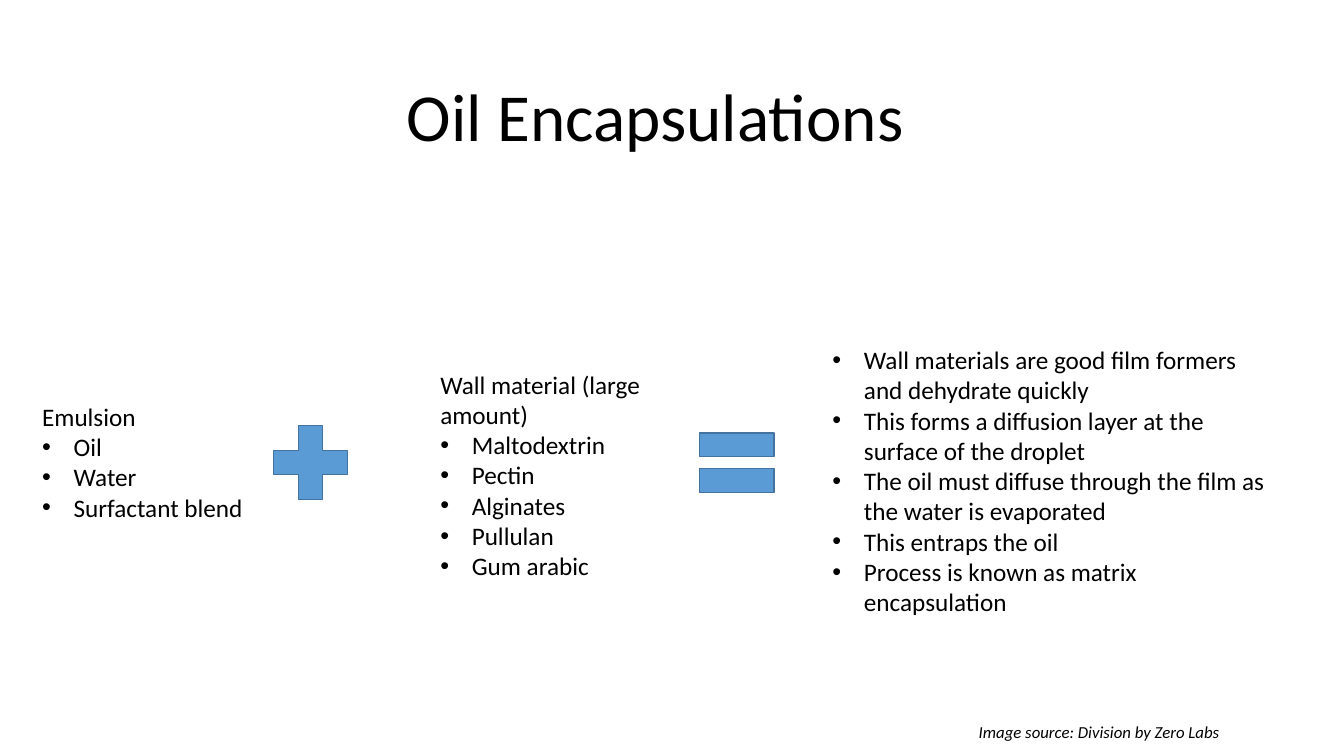
import pptx
import pptx.dml.color
import pptx.enum.shapes
import pptx.enum.text
import pptx.oxml.ns
import pptx.util
from lxml import etree

Pt = pptx.util.Pt
SHAPES = pptx.enum.shapes.MSO_SHAPE
FONT = "Calibri"
COLORS = {"text": "000000", "sign": "5B9BD5", "sign_line": "43739E"}
BULLET_INDENT = 22.5

EMULSION = ["Oil", "Water", "Surfactant blend"]
WALL_MATERIALS = ["Maltodextrin", "Pectin", "Alginates", "Pullulan", "Gum arabic"]
PROCESS = [
    "Wall materials are good film formers and dehydrate quickly",
    "This forms a diffusion layer at the surface of the droplet",
    "The oil must diffuse through the film as the water is evaporated",
    "This entraps the oil",
    "Process is known as matrix encapsulation",
]


def color(name):
    return pptx.dml.color.RGBColor.from_string(COLORS[name])


def set_font(para, size, italic=False):
    para.font.name = FONT
    para.font.size = Pt(size)
    para.font.italic = italic
    para.font.color.rgb = color("text")


def add_bullet(para):
    properties = para._p.get_or_add_pPr()
    properties.set("marL", str(Pt(BULLET_INDENT)))
    properties.set("indent", str(-Pt(BULLET_INDENT)))
    for tag, attribute, value in (("a:buFont", "typeface", "Arial"),
                                  ("a:buChar", "char", "•")):
        element = etree.SubElement(properties, pptx.oxml.ns.qn(tag))
        element.set(attribute, value)


def set_title(page, text, left, top, width, height):
    title = page.shapes.title
    title.left, title.top = Pt(left), Pt(top)
    title.width, title.height = Pt(width), Pt(height)
    frame = title.text_frame
    frame.text = text
    frame.word_wrap = True
    frame.auto_size = pptx.enum.text.MSO_AUTO_SIZE.NONE
    frame.vertical_anchor = pptx.enum.text.MSO_ANCHOR.TOP
    para = frame.paragraphs[0]
    para.alignment = pptx.enum.text.PP_ALIGN.CENTER
    set_font(para, 48)


def add_text(page, left, top, width, height, heading=None, bullets=(),
             size=18, italic=False):
    """Add a text box with an optional plain first line above its bullets."""
    box = page.shapes.add_textbox(Pt(left), Pt(top), Pt(width), Pt(height))
    frame = box.text_frame
    frame.word_wrap = True
    lines = [(heading, False)] if heading else []
    lines += [(bullet, True) for bullet in bullets]
    for index, (text, bulleted) in enumerate(lines):
        para = frame.add_paragraph() if index else frame.paragraphs[0]
        para.text = text
        if bulleted:
            add_bullet(para)
        set_font(para, size, italic)


def add_sign(page, kind, left):
    sign = page.shapes.add_shape(kind, Pt(left), Pt(294.5), Pt(72), Pt(72))
    sign.shadow.inherit = False
    sign.fill.solid()
    sign.fill.fore_color.rgb = color("sign")
    sign.line.color.rgb = color("sign_line")
    sign.line.width = Pt(1)


def main():
    deck = pptx.Presentation()
    deck.slide_width, deck.slide_height = Pt(960), Pt(540)
    page = deck.slides.add_slide(deck.slide_layouts[5])

    set_title(page, "Oil Encapsulations", 92, 49.7, 752, 65.5)
    add_text(page, 23, 283, 206, 94.3, "Emulsion", EMULSION)
    add_sign(page, SHAPES.MATH_PLUS, 185.8)
    add_text(page, 307.4, 260, 206, 181.4, "Wall material (large amount)",
             WALL_MATERIALS)
    add_sign(page, SHAPES.MATH_EQUAL, 490.3)
    add_text(page, 587.5, 242.6, 334, 203.8, bullets=PROCESS)
    add_text(page, 692, 512, 289.4, 21.6,
             "Image source: Division by Zero Labs", size=12, italic=True)

    deck.save("out.pptx")


if __name__ == "__main__":
    main()
